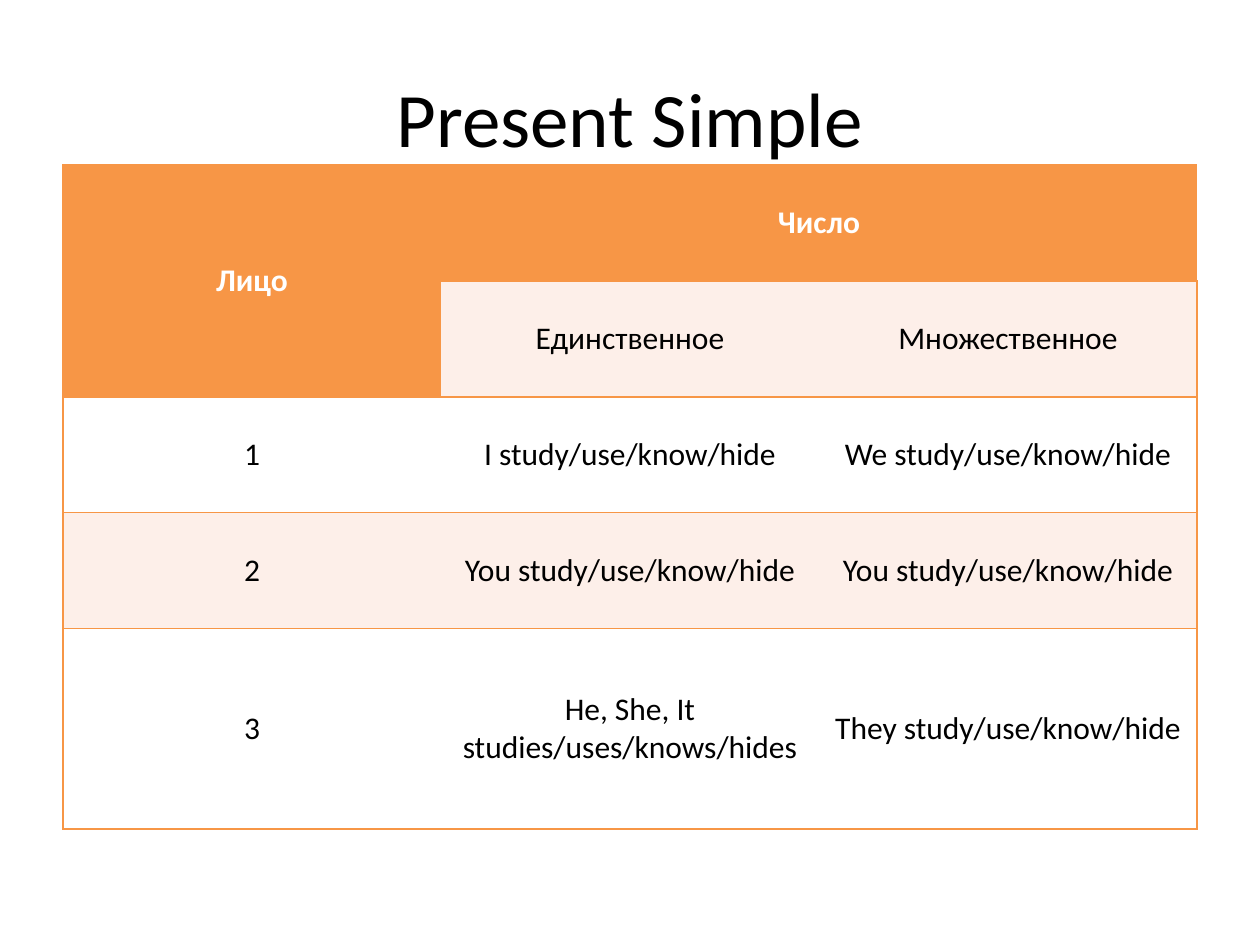
from lxml.etree import SubElement
from pptx import Presentation
from pptx.dml.color import RGBColor
from pptx.enum.text import MSO_ANCHOR, PP_ALIGN
from pptx.oxml.ns import qn
from pptx.util import Inches, Pt

ORANGE, PEACH, WHITE, BLACK = "F79646", "FDEFE9", "FFFFFF", "000000"
COLUMN_WIDTHS = [3, 3, 3]
ROW_HEIGHTS = [0.92, 0.92, 0.92, 0.92, 1.59]
CONJUGATION = [
    ["Лицо", "Число", ""],
    ["", "Единственное", "Множественное"],
    ["1", "I study/use/know/hide", "We study/use/know/hide"],
    ["2", "You study/use/know/hide", "You study/use/know/hide"],
    ["3", "He, She, It studies/uses/knows/hides", "They study/use/know/hide"],
]
HEADER_CELLS = {(0, 0), (0, 1), (0, 2), (1, 0)}


def rgb(value):
    return RGBColor.from_string(value)


class SlideBuilder:
    font = "Calibri"

    def __init__(self, slide):
        self.slide = slide

    def add_text(self, frame, text, size, color, bold=False):
        paragraph = frame.paragraphs[0]
        paragraph.alignment = PP_ALIGN.CENTER
        run = paragraph.add_run()
        run.text = text
        run.font.name = self.font
        run.font.size = Pt(size)
        run.font.bold = bold
        run.font.color.rgb = rgb(color)

    def title(self, text, left, top, width, height):
        heading = self.slide.shapes.add_textbox(
            Inches(left), Inches(top), Inches(width), Inches(height))
        frame = heading.text_frame
        frame.word_wrap = True
        frame.vertical_anchor = MSO_ANCHOR.MIDDLE
        self.add_text(frame, text, 44, BLACK)

    def borders(self, cell, visible):
        properties = cell._tc.get_or_add_tcPr()
        for side in "LRTB":
            line = SubElement(properties, qn(f"a:ln{side}"), w=str(Pt(1)))
            if side in visible:
                fill = SubElement(line, qn("a:solidFill"))
                SubElement(fill, qn("a:srgbClr"), val=ORANGE)
            else:
                SubElement(line, qn("a:noFill"))

    def cell(self, cell, text, fill, color, bold, visible):
        self.borders(cell, visible)
        cell.fill.solid()
        cell.fill.fore_color.rgb = rgb(fill)
        cell.vertical_anchor = MSO_ANCHOR.MIDDLE
        if text:
            self.add_text(cell.text_frame, text, 18, color, bold)

    def table(self, left, top):
        grid = self.slide.shapes.add_table(
            len(ROW_HEIGHTS), len(COLUMN_WIDTHS), Inches(left), Inches(top),
            Inches(sum(COLUMN_WIDTHS)), Inches(sum(ROW_HEIGHTS))).table
        for column, width in zip(grid.columns, COLUMN_WIDTHS):
            column.width = Inches(width)
        for row, height in zip(grid.rows, ROW_HEIGHTS):
            row.height = Inches(height)
        grid.cell(0, 0).merge(grid.cell(1, 0))
        grid.cell(0, 1).merge(grid.cell(0, 2))
        outer_sides = ["LTB", "TB", "RTB"]
        for r, words in enumerate(CONJUGATION):
            for c, text in enumerate(words):
                header = (r, c) in HEADER_CELLS
                band = PEACH if r % 2 else WHITE
                self.cell(grid.cell(r, c), text, ORANGE if header else band,
                          WHITE if header else BLACK, header, outer_sides[c])


def main():
    presentation = Presentation()
    presentation.slide_width = Inches(10)
    presentation.slide_height = Inches(7.5)
    builder = SlideBuilder(
        presentation.slides.add_slide(presentation.slide_layouts[6]))
    builder.title("Present Simple", 0.5, 0.3, 9, 1.25)
    builder.table(0.5, 1.31)
    presentation.save("out.pptx")


if __name__ == "__main__":
    main()
